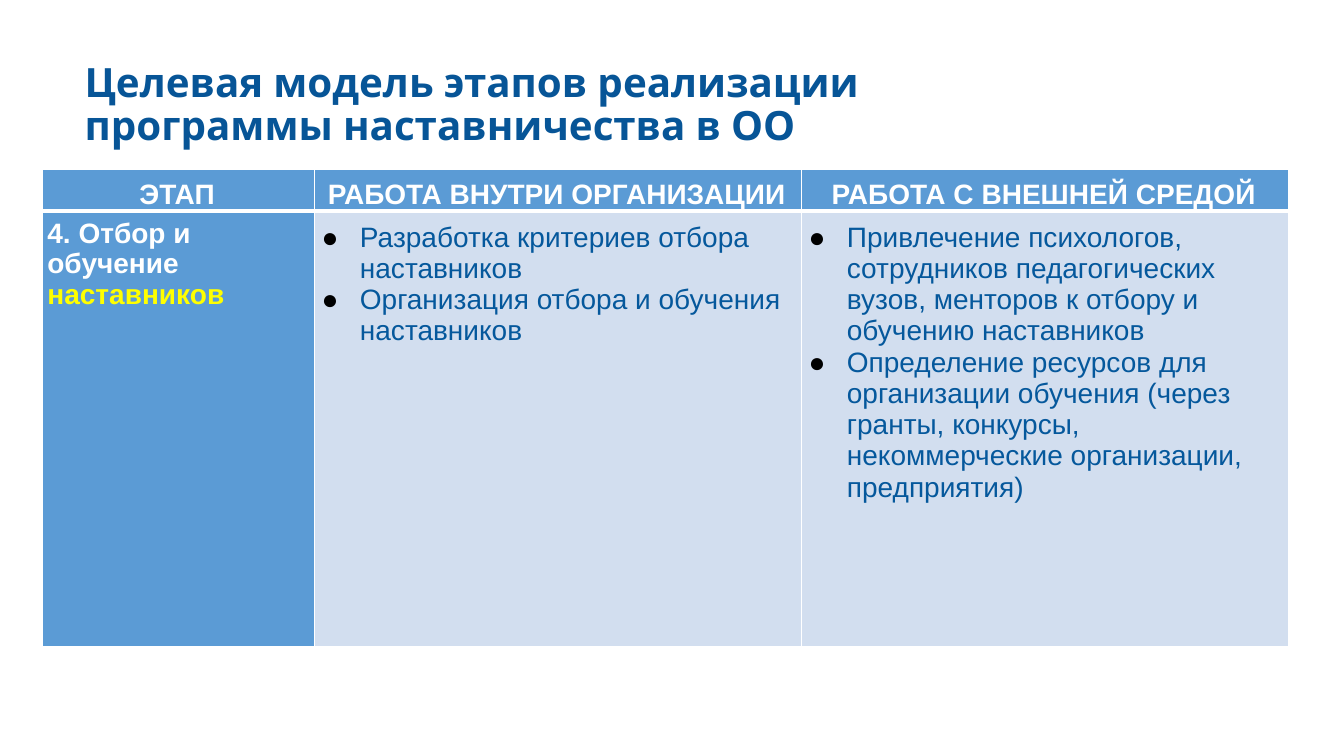
from lxml import etree
from pptx import Presentation
from pptx import util as u
from pptx.dml import color
from pptx.enum import text
from pptx.oxml import ns

COLORS = {
    "title": "075597",
    "header": "5B9BD5",
    "body": "D2DEEF",
    "ink": "05589C",
    "white": "FFFFFF",
    "accent": "FFFF00",
    "bullet": "000000",
}
HEADINGS = ["ЭТАП ", "РАБОТА ВНУТРИ ОРГАНИЗАЦИИ ", "РАБОТА С ВНЕШНЕЙ СРЕДОЙ "]
STAGE = [("4. Отбор и обучение", "white"), ("наставников", "accent")]
TASKS = [
    [
        "Разработка критериев отбора наставников",
        "Организация отбора и обучения наставников",
    ],
    [
        "Привлечение психологов, сотрудников педагогических вузов, "
        "менторов к отбору и обучению наставников",
        "Определение ресурсов для организации обучения (через гранты, "
        "конкурсы, некоммерческие организации, предприятия)",
    ],
]


def rgb(name):
    return color.RGBColor.from_string(COLORS[name])


def add_color(parent, name):
    etree.SubElement(parent, ns.qn("a:srgbClr"), val=COLORS[name])


def style_font(para, name, size, hue, bold):
    para.font.name = name
    para.font.size = u.Pt(size)
    para.font.bold = bold
    para.font.color.rgb = rgb(hue)


def add_bullet(para):
    props = para._p.get_or_add_pPr()
    props.set("marL", str(u.Inches(0.38)))
    props.set("indent", str(-u.Inches(0.38)))
    add_color(etree.SubElement(props, ns.qn("a:buClr")), "bullet")
    etree.SubElement(props, ns.qn("a:buFont"), typeface="Arial")
    etree.SubElement(props, ns.qn("a:buChar"), char="●")


def set_borders(cell, top, bottom):
    props = cell._tc.get_or_add_tcPr()
    sides = [("a:lnL", 1), ("a:lnR", 1), ("a:lnT", top), ("a:lnB", bottom)]
    for index, (tag, width) in enumerate(sides):
        line = etree.Element(ns.qn(tag), w=str(u.Pt(width)))
        add_color(etree.SubElement(line, ns.qn("a:solidFill")), "white")
        props.insert(index, line)


def format_cell(cell, fill, left, top):
    cell.fill.solid()
    cell.fill.fore_color.rgb = rgb(fill)
    cell.margin_left, cell.margin_top = u.Inches(left), u.Inches(top)
    cell.margin_right = cell.margin_bottom = 0


def fill_cell(cell, lines):
    for index, line in enumerate(lines):
        frame = cell.text_frame
        para = frame.paragraphs[0] if index == 0 else frame.add_paragraph()
        para.text = line
        yield para


def add_title(page, left, top, width, height):
    box = page.shapes.add_textbox(*map(u.Inches, (left, top, width, height)))
    frame = box.text_frame
    frame.word_wrap = True
    frame.vertical_anchor = text.MSO_ANCHOR.MIDDLE
    para = frame.paragraphs[0]
    para.text = "Целевая модель этапов реализации программы наставничества в ОО"
    para.line_spacing = 0.9
    style_font(para, "Karla", 28.8, "title", True)


def add_stage_table(page, left, top, width, height):
    header_height, stage_width = 0.41, 2.7
    task_width = (width - stage_width) / 2
    frame = page.shapes.add_table(2, 3, *map(u.Inches, (left, top, width, height)))
    table = frame.table
    table.first_row = table.horz_banding = False
    for column, size in zip(table.columns, (stage_width, task_width, task_width)):
        column.width = u.Inches(size)
    for row, size in zip(table.rows, (header_height, height - header_height)):
        row.height = u.Inches(size)

    for index, heading in enumerate(HEADINGS):
        cell = table.cell(0, index)
        format_cell(cell, "header", 0.05, 0.08)
        set_borders(cell, 1, 3)
        cell.vertical_anchor = text.MSO_ANCHOR.MIDDLE
        for para in fill_cell(cell, [heading]):
            para.alignment = text.PP_ALIGN.CENTER
            para.line_spacing = 1.07
            style_font(para, "Arial", 20, "white", True)

    stage = table.cell(1, 0)
    format_cell(stage, "header", 0.05, 0.08)
    set_borders(stage, 3, 1)
    lines, hues = zip(*STAGE)
    for para, hue in zip(fill_cell(stage, lines), hues):
        para.line_spacing = 0.98
        para.space_after = u.Pt(0.1)
        style_font(para, "Arial", 20, hue, True)

    for index, tasks in enumerate(TASKS, start=1):
        cell = table.cell(1, index)
        format_cell(cell, "body", 0.07, 0.11)
        set_borders(cell, 3, 1)
        for para in fill_cell(cell, tasks):
            add_bullet(para)
            style_font(para, "Arial", 20, "ink", False)


def main():
    deck = Presentation()
    deck.slide_width, deck.slide_height = u.Inches(13.33), u.Inches(7.5)
    page = deck.slides.add_slide(deck.slide_layouts[6])
    add_stage_table(page, 0.42, 1.68, 12.36, 4.73)
    add_title(page, 0.74, 0.58, 8.32, 0.94)
    deck.save("out.pptx")


if __name__ == "__main__":
    main()
